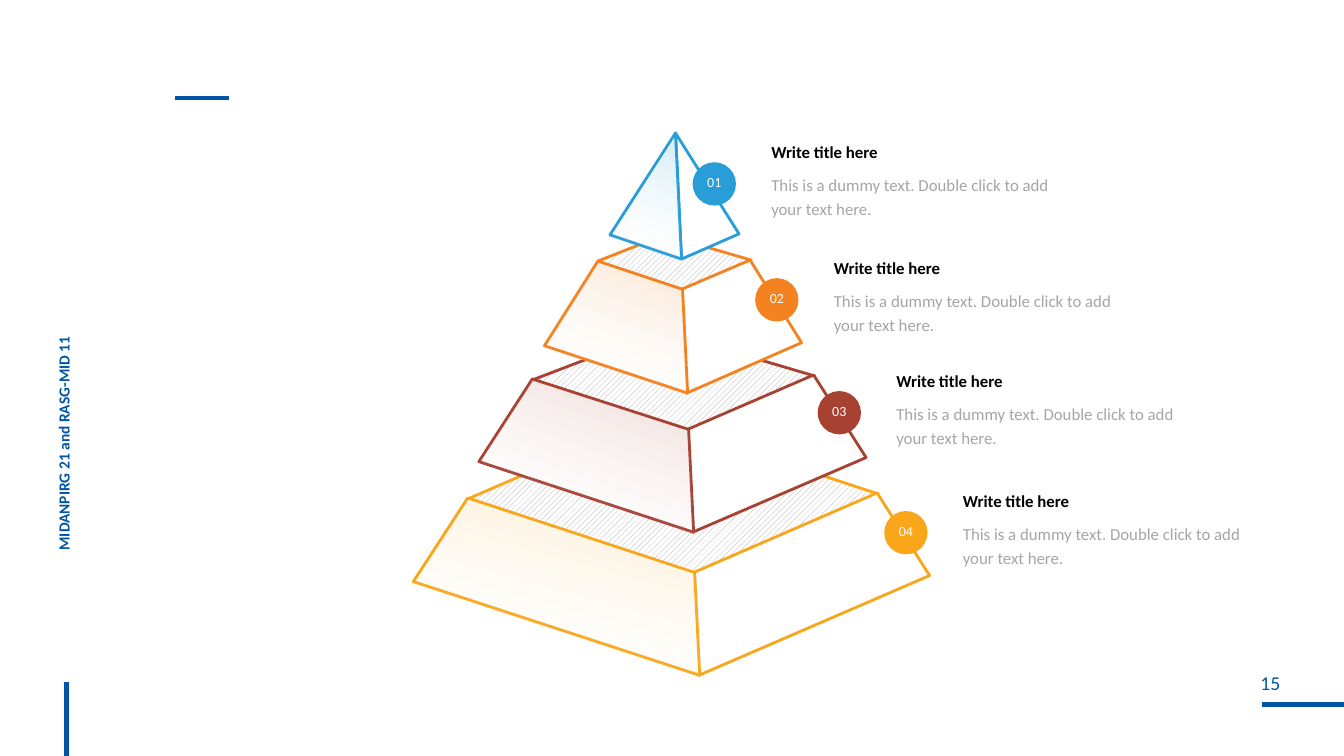
from dataclasses import dataclass

from lxml import etree
from pptx import Presentation, util as u
from pptx.dml.color import RGBColor
from pptx.enum import dml, shapes, text
from pptx.oxml import ns

# Grid: cells of a tenth of an inch
CELL = u.Inches(0.1)
COLUMNS, ROWS = 133.3, 75

NAVY = RGBColor(0x00, 0x55, 0xA5)
SKY = RGBColor(0x28, 0x9D, 0xD8)
ORANGE = RGBColor(0xF5, 0x82, 0x20)
BRICK = RGBColor(0xA7, 0x42, 0x33)
AMBER = RGBColor(0xFA, 0xA6, 0x1A)
HATCH_GREY = RGBColor(0xA6, 0xA6, 0xA6)
TEXT_GREY = RGBColor(0x80, 0x80, 0x80)
BLACK = RGBColor(0x00, 0x00, 0x00)
WHITE = RGBColor(0xFF, 0xFF, 0xFF)

FONT = "Calibri"
BADGE_SIZE = 4.3
LABEL_OFFSET = (7.8, -2.9)
TITLE = "Write title here"
BODY = "This is a dummy text. Double click to add your text here."

Point = tuple[float, float]


@dataclass(frozen=True)
class Tier:
    color: RGBColor
    cap: list[Point]
    right: list[Point]
    left: list[Point]
    badge: Point
    tint_shift: Point
    tint_angle: int = 110


# Tiers from the tip down
TIERS = [
    Tier(SKY, [],
         [(67, 13.2), (67.6, 25.7), (73.3, 23.2)],
         [(67.6, 25.7), (60.5, 23.3), (67, 13.2)],
         (68.7, 16.1), (0, 0.5)),
    Tier(ORANGE, [(59.3, 25.9), (65.9, 23.3), (74.5, 25.8), (67.8, 29.8)],
         [(74.4, 25.8), (67.6, 28.7), (68.1, 39), (79.5, 34)],
         [(68.2, 39), (67.7, 28.7), (59.3, 25.9), (54, 34.3)],
         (74.9, 27.6), (-0.1, 0.1)),
    Tier(BRICK, [(52.8, 37.7), (65.6, 32.8), (80.8, 37.3), (68.3, 42.7)],
         [(80.7, 37.2), (68.2, 42.6), (68.7, 52.8), (85.9, 45.4)],
         [(68.8, 52.8), (68.3, 42.6), (52.8, 37.6), (47.5, 45.8)],
         (81.1, 38.8), (0, 0.1)),
    Tier(AMBER, [(46.4, 49.5), (64.6, 41.6), (87.1, 49), (69, 58.5)],
         [(87, 48.9), (68.8, 56.8), (69.3, 67), (92.2, 57.1)],
         [(69.4, 67), (68.9, 56.8), (46.4, 49.4), (41, 57.7)],
         (87.7, 50.7), (0.1, 0.3), 105),
]

# Accent bars: start and end
BARS = [
    ((125.2, 69.9), (COLUMNS, 69.9)),
    ((6.6, 67.7), (6.6, ROWS)),
    ((17.4, 9.7), (22.7, 9.7)),
]


def cells(*values: float) -> list[int]:
    return [u.Emu(round(value * CELL)) for value in values]


def add_alpha(color_element, percent: int) -> None:
    alpha = etree.SubElement(color_element, ns.qn("a:alpha"))
    alpha.set("val", str(percent * 1000))


def add_run(paragraph, words: str, size: float, color: RGBColor, bold: bool = False):
    run = paragraph.add_run()
    run.text = words
    run.font.name, run.font.size, run.font.bold = FONT, u.Pt(size), bold
    run.font.color.rgb = color
    return run


def set_insets(frame, side: float, end: float) -> None:
    frame.margin_left, frame.margin_right = cells(side, side)
    frame.margin_top, frame.margin_bottom = cells(end, end)


def add_bar(slide, start: Point, end: Point) -> None:
    bar = slide.shapes.add_connector(shapes.MSO_CONNECTOR.STRAIGHT, *cells(*start, *end))
    bar.line.color.rgb = NAVY
    bar.line.width = u.Pt(3)
    properties = bar._element.xpath("./p:spPr")[0]
    etree.SubElement(properties, ns.qn("a:effectLst"))


def add_polygon(slide, points: list[Point]):
    corners = [cells(*point) for point in points]
    builder = slide.shapes.build_freeform(*corners[0], scale=1.0)
    builder.add_line_segments(corners[1:], close=True)
    shape = builder.convert_to_shape()
    shape.shadow.inherit = False
    return shape


def add_face(slide, points: list[Point], color: RGBColor, hatched: bool = False) -> None:
    face = add_polygon(slide, points)
    if hatched:
        face.fill.patterned()
        face.fill.pattern = dml.MSO_PATTERN.WIDE_UPWARD_DIAGONAL
        face.fill.fore_color.rgb = HATCH_GREY
        face.fill.back_color.rgb = WHITE
    else:
        face.fill.solid()
        face.fill.fore_color.rgb = WHITE
    face.line.color.rgb = color
    face.line.width = u.Pt(2)
    etree.SubElement(face._element.xpath("./p:spPr/a:ln")[0], ns.qn("a:round"))


def add_tint(slide, tier: Tier) -> None:
    across, down = tier.tint_shift
    tint = add_polygon(slide, [(x + across, y + down) for x, y in tier.left])
    tint.line.fill.background()
    tint.fill.gradient()
    tint.fill.gradient_angle = 360 - tier.tint_angle
    stops = tint.fill.gradient_stops
    for stop, color, position in zip(stops, (tier.color, WHITE), (0, 0.99)):
        stop.color.rgb = color
        stop.position = position
    for element, percent in zip(tint._element.xpath(".//a:gs/a:srgbClr"), (20, 0)):
        add_alpha(element, percent)


def add_badge(slide, tier: Tier, number: int) -> None:
    badge = slide.shapes.add_shape(
        shapes.MSO_SHAPE.OVAL, *cells(*tier.badge, BADGE_SIZE, BADGE_SIZE))
    badge.shadow.inherit = False
    badge.fill.solid()
    badge.fill.fore_color.rgb = tier.color
    badge.line.fill.background()
    frame = badge.text_frame
    set_insets(frame, 0, 0)
    frame.vertical_anchor = text.MSO_ANCHOR.MIDDLE
    paragraph = frame.paragraphs[0]
    paragraph.alignment = text.PP_ALIGN.CENTER
    paragraph.line_spacing = 0.8
    add_run(paragraph, f"{number:02}", 10, WHITE)


def add_label(slide, tier: Tier) -> None:
    left, top = (a + b for a, b in zip(tier.badge, LABEL_OFFSET))
    frame = slide.shapes.add_textbox(*cells(left, top, 29.6, 9.5)).text_frame
    frame.word_wrap = True
    frame.auto_size = text.MSO_AUTO_SIZE.SHAPE_TO_FIT_TEXT
    set_insets(frame, 0, 0.5)
    heading, body = frame.paragraphs[0], frame.add_paragraph()
    heading.line_spacing = body.line_spacing = 1.2
    body.space_before = u.Pt(6)
    add_run(heading, TITLE, 12, BLACK, bold=True)
    run = add_run(body, BODY, 12, TEXT_GREY)
    add_alpha(run._r.xpath(".//a:srgbClr")[0], 70)


def add_page_furniture(slide) -> None:
    for start, end in BARS:
        add_bar(slide, start, end)

    page = slide.shapes.add_textbox(*cells(120, 66.6, 12, 3.3)).text_frame
    page.word_wrap = False
    set_insets(page, 0, 0)
    page.paragraphs[0].alignment = text.PP_ALIGN.CENTER
    add_run(page.paragraphs[0], "15", 14, NAVY)

    sidebar = slide.shapes.add_textbox(*cells(-19, 28.3, 51.4, 3.2))
    sidebar.rotation = 270
    sidebar.text_frame.word_wrap = True
    paragraph = sidebar.text_frame.paragraphs[0]
    paragraph.line_spacing = 0.9
    add_run(paragraph, "MIDANPIRG 21 and RASG-MID 11", 11, NAVY, bold=True)


def main() -> None:
    presentation = Presentation()
    presentation.slide_width, presentation.slide_height = cells(COLUMNS, ROWS)
    slide = presentation.slides.add_slide(presentation.slide_layouts[6])
    add_page_furniture(slide)

    # Pyramid, from the base up so that each tier covers the one below
    for tier in reversed(TIERS):
        if tier.cap:
            add_face(slide, tier.cap, tier.color, hatched=True)
        add_face(slide, tier.right, tier.color)
        add_face(slide, tier.left, tier.color)

    # Numbers and labels
    for number, tier in enumerate(TIERS, start=1):
        add_badge(slide, tier, number)
        add_label(slide, tier)

    # Soft shading on the left faces
    for tier in TIERS:
        add_tint(slide, tier)

    presentation.save("out.pptx")


if __name__ == "__main__":
    main()
